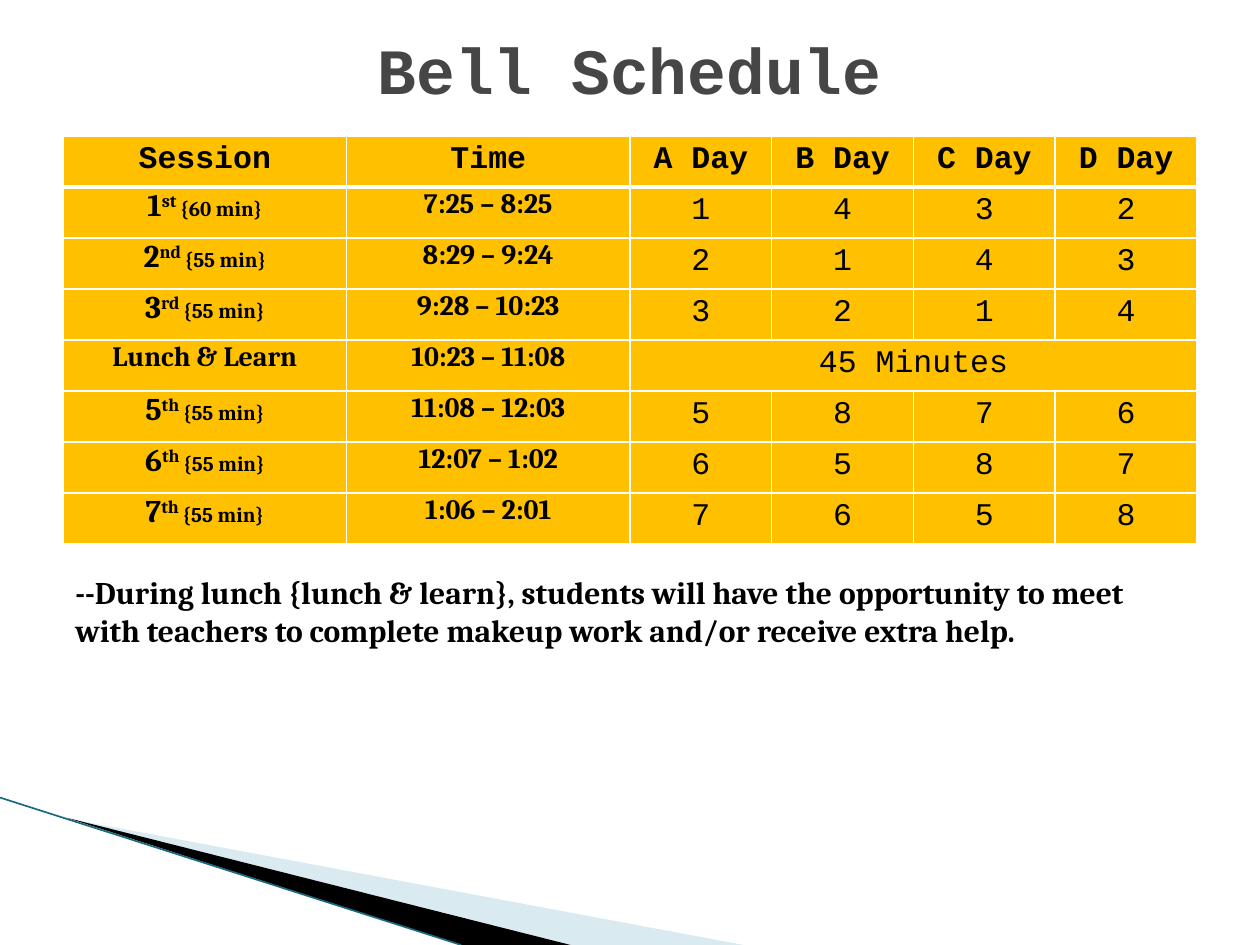
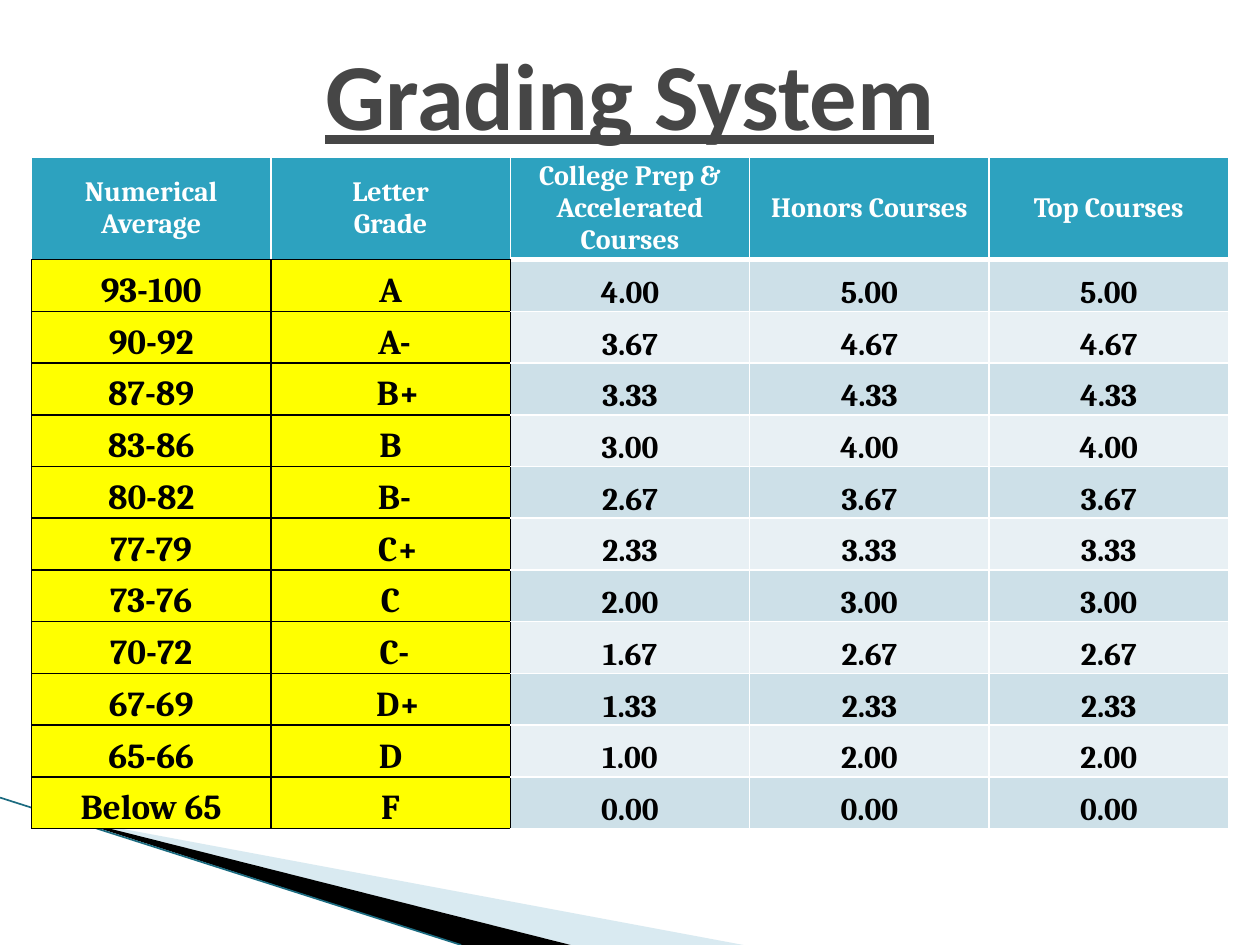
from lxml import etree
from pptx import Presentation
from pptx.dml.color import RGBColor
from pptx.enum.shapes import MSO_CONNECTOR
from pptx.enum.text import MSO_ANCHOR, PP_ALIGN
from pptx.oxml.ns import qn
from pptx.util import Inches, Pt

TOP, MIDDLE, BOTTOM = MSO_ANCHOR.TOP, MSO_ANCHOR.MIDDLE, MSO_ANCHOR.BOTTOM
LEFT, CENTER = PP_ALIGN.LEFT, PP_ALIGN.CENTER
STRAIGHT = MSO_CONNECTOR.STRAIGHT
WIDTH, HEIGHT = 10, 7.5

BLACK, WHITE, TITLE_GREY = "000000", "FFFFFF", "464646"
GOLD, YELLOW, TEAL = "FFC000", "FFFF00", "2DA2BF"
BAND_DARK, BAND_LIGHT = "CDE0E8", "E8F0F4"
WEDGE_BLUE, EDGE_TEAL = "A0CBDC", "1B6B80"
SERIF, MONO, SANS = "Cambria", "Courier New", "Calibri"

THIN_WHITE, THICK_WHITE, THIN_BLACK = (WHITE, 1), (WHITE, 3), (BLACK, 1)
NARROW = (0.07, 0, 0.07, 0)
SESSION_INSETS = (0.07, 0.01, 0.07, 0)
ROOMY = (0.1, 0.05, 0.1, 0.05)

DAYS = ["A Day", "B Day", "C Day", "D Day"]
SESSIONS = [
    (("1", "st", "60"), "7:25 – 8:25", "1432"),
    (("2", "nd", "55"), "8:29 – 9:24", "2143"),
    (("3", "rd", "55"), "9:28 – 10:23", "3214"),
    (None, "10:23 – 11:08", None),
    (("5", "th", "55"), "11:08 – 12:03", "5876"),
    (("6", "th", "55"), "12:07 – 1:02", "6587"),
    (("7", "th", "55"), "1:06 – 2:01", "7658"),
]
GRADE_HEADS = ["Numerical Average", "Letter\nGrade",
               "College Prep & Accelerated Courses", "Honors Courses", "Top Courses"]
GRADES = [
    ("93-100", "A", 4.00), ("90-92", "A-", 3.67), ("87-89", "B+", 3.33),
    ("83-86", "B", 3.00), ("80-82", "B-", 2.67), ("77-79", "C+", 2.33),
    ("73-76", "C", 2.00), ("70-72", "C-", 1.67), ("67-69", "D+", 1.33),
    ("65-66", "D", 1.00), ("Below 65", "F", 0.00),
]
SIGN_INDENT = {"-": 0.06, "+": 0.12}


def color(value):
    return RGBColor.from_string(value)


def style_span(span, size, font, ink=BLACK, bold=True, underline=None):
    span.font.size, span.font.name = Pt(size), font
    span.font.bold, span.font.underline = bold, underline
    span.font.color.rgb = color(ink)


def write(frame, text, align, size, font, **style):
    frame.text = text
    for para in frame.paragraphs:
        para.alignment = align
        for span in para.runs:
            style_span(span, size, font, **style)


def add_text(page, area, text, anchor, align, size, font, **style):
    box = page.shapes.add_textbox(*map(Inches, area))
    box.text_frame.word_wrap = True
    box.text_frame.vertical_anchor = anchor
    write(box.text_frame, text, align, size, font, **style)


def add_title(page, top, height, text, size, font, **style):
    area = (0.05 * WIDTH, top, 0.9 * WIDTH, height)
    add_text(page, area, text, MIDDLE, CENTER, size, font, ink=TITLE_GREY, **style)


# Decoration shared by all slides
def add_wedge(page, points, fill, opacity=100):
    start, *others = [(Inches(x), Inches(y)) for x, y in points]
    builder = page.shapes.build_freeform(*start)
    builder.add_line_segments(others, close=True)
    wedge = builder.convert_to_shape()
    wedge.shadow.inherit = False
    wedge.line.fill.background()
    wedge.fill.solid()
    wedge.fill.fore_color.rgb = color(fill)
    if opacity < 100:
        tint = wedge._element.spPr.find(qn("a:solidFill"))[0]
        etree.SubElement(tint, qn("a:alpha"), val=str(opacity * 1000))


def add_corner(page):
    add_wedge(page, [(0.55, 6.5), (5.9, HEIGHT), (4.53, HEIGHT)], WEDGE_BLUE, 40)
    add_wedge(page, [(0.53, 6.49), (4.53, HEIGHT), (3.66, HEIGHT)], BLACK)
    edge = page.shapes.add_connector(
        STRAIGHT, 0, Inches(6.33), Inches(3.66), Inches(HEIGHT))
    edge.line.color.rgb = color(EDGE_TEAL)
    edge.line.width = Pt(0.95)
    etree.SubElement(edge._element.spPr, qn("a:effectLst"))


def add_page(deck):
    page = deck.slides.add_slide(deck.slide_layouts[6])
    page.background.fill.solid()
    page.background.fill.fore_color.rgb = color(WHITE)
    add_corner(page)
    return page


# Tables
def add_grid(page, left, top, widths, heights):
    table = page.shapes.add_table(
        len(heights), len(widths), Inches(left), Inches(top),
        Inches(sum(widths)), Inches(sum(heights))).table
    table.first_row = table.horz_banding = False
    for column, width in zip(table.columns, widths):
        column.width = Inches(width)
    for row, height in zip(table.rows, heights):
        row.height = Inches(height)
    return table


def dress_cell(cell, fill, border=THIN_WHITE, insets=ROOMY, anchor=TOP, **sides):
    """Borders, fill and insets; sides may override left, right, top or bottom."""
    props = cell._tc.get_or_add_tcPr()
    for side in ("left", "right", "top", "bottom"):
        ink, width = sides.get(side, border)
        line = etree.SubElement(props, qn("a:ln" + side[0].upper()), w=str(Pt(width)))
        solid = etree.SubElement(line, qn("a:solidFill"))
        etree.SubElement(solid, qn("a:srgbClr"), val=ink)
    cell.fill.solid()
    cell.fill.fore_color.rgb = color(fill)
    cell.vertical_anchor = anchor
    cell.margin_left, cell.margin_top, cell.margin_right, cell.margin_bottom = map(
        Inches, insets)


def write_session(frame, session):
    if session is None:
        write(frame, "Lunch & Learn", CENTER, 16, SERIF)
        return
    number, suffix, minutes = session
    write(frame, number, CENTER, 18, SERIF)
    para = frame.paragraphs[0]
    for text, size in ((suffix + " ", 18), (f"{{{minutes} min}}", 12)):
        span = para.add_run()
        span.text = text
        style_span(span, size, SERIF)
    para.runs[1]._r.get_or_add_rPr().set("baseline", "30000")


def add_bell_table(page):
    unit = 0.9 * WIDTH / 8
    table = add_grid(page, 0.5, 1.08, [2 * unit] * 2 + [unit] * 4, [0.405] * 8)
    for column, head in enumerate(["Session", "Time"] + DAYS):
        cell = table.cell(0, column)
        dress_cell(cell, GOLD, bottom=THICK_WHITE)
        write(cell.text_frame, head, CENTER, 18, MONO)
    for row, (session, time, periods) in enumerate(SESSIONS, 1):
        top = THICK_WHITE if row == 1 else THIN_WHITE
        for column in range(6):
            insets = SESSION_INSETS if column < 2 else ROOMY
            dress_cell(table.cell(row, column), GOLD, insets=insets, top=top)
        write_session(table.cell(row, 0).text_frame, session)
        write(table.cell(row, 1).text_frame, time, CENTER, 16, SERIF)
        if periods is None:
            table.cell(row, 2).merge(table.cell(row, 5))
        for column, period in enumerate(periods or ["45 Minutes"], 2):
            write(table.cell(row, column).text_frame, period, CENTER, 18, MONO, bold=False)


def add_grade_table(page):
    table = add_grid(page, 0.25, 1.25, [0.19 * WIDTH] * 5, [0.81] + [0.411] * 11)
    for column, head in enumerate(GRADE_HEADS):
        cell = table.cell(0, column)
        bottom = THIN_BLACK if column < 2 else THICK_WHITE
        dress_cell(cell, TEAL, insets=NARROW, anchor=MIDDLE, bottom=bottom)
        write(cell.text_frame, head, CENTER, 16, SERIF, ink=WHITE)
    for row, (average, letter, points) in enumerate(GRADES, 1):
        weighted = points + 1 if points else 0
        for column, text in enumerate((average, letter)):
            cell = table.cell(row, column)
            indent = SIGN_INDENT.get(text[-1], 0)
            dress_cell(cell, YELLOW, THIN_BLACK, (0.07 + indent, 0, 0.07, 0), BOTTOM)
            write(cell.text_frame, text, CENTER, 20, SERIF)
        for column, value in enumerate((points, weighted, weighted), 2):
            cell = table.cell(row, column)
            dress_cell(cell, BAND_DARK if row % 2 else BAND_LIGHT,
                       insets=NARROW, anchor=BOTTOM,
                       left=THIN_BLACK if column == 2 else THIN_WHITE,
                       top=THICK_WHITE if row == 1 else THIN_WHITE)
            write(cell.text_frame, f"{value:.2f}", CENTER, 18, SERIF)


def main():
    deck = Presentation()
    deck.slide_width, deck.slide_height = Inches(WIDTH), Inches(HEIGHT)

    # Bell schedule
    page = add_page(deck)
    add_bell_table(page)
    add_title(page, 0.17, 0.75, "Bell Schedule", 36.9, MONO)
    add_text(page, (0.5, 4.5, 9, 0.71),
             "--During lunch {lunch & learn}, students will have the opportunity to meet"
             "\vwith teachers to complete makeup work and/or receive extra help.",
             TOP, LEFT, 18, SERIF)

    # Grading system
    page = add_page(deck)
    add_grade_table(page)
    add_title(page, 0.3, 0.87, "Grading System", 54, SANS, underline=True)

    deck.save("out.pptx")


if __name__ == "__main__":
    main()
